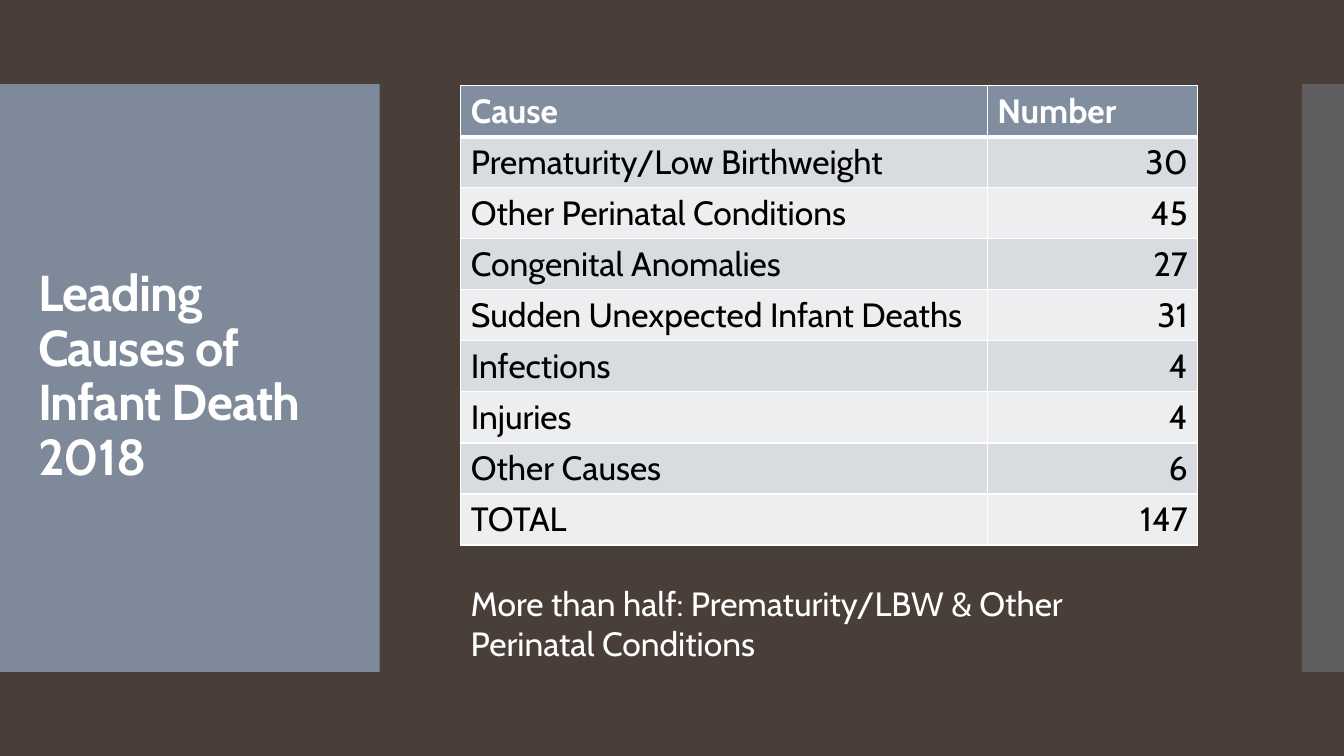
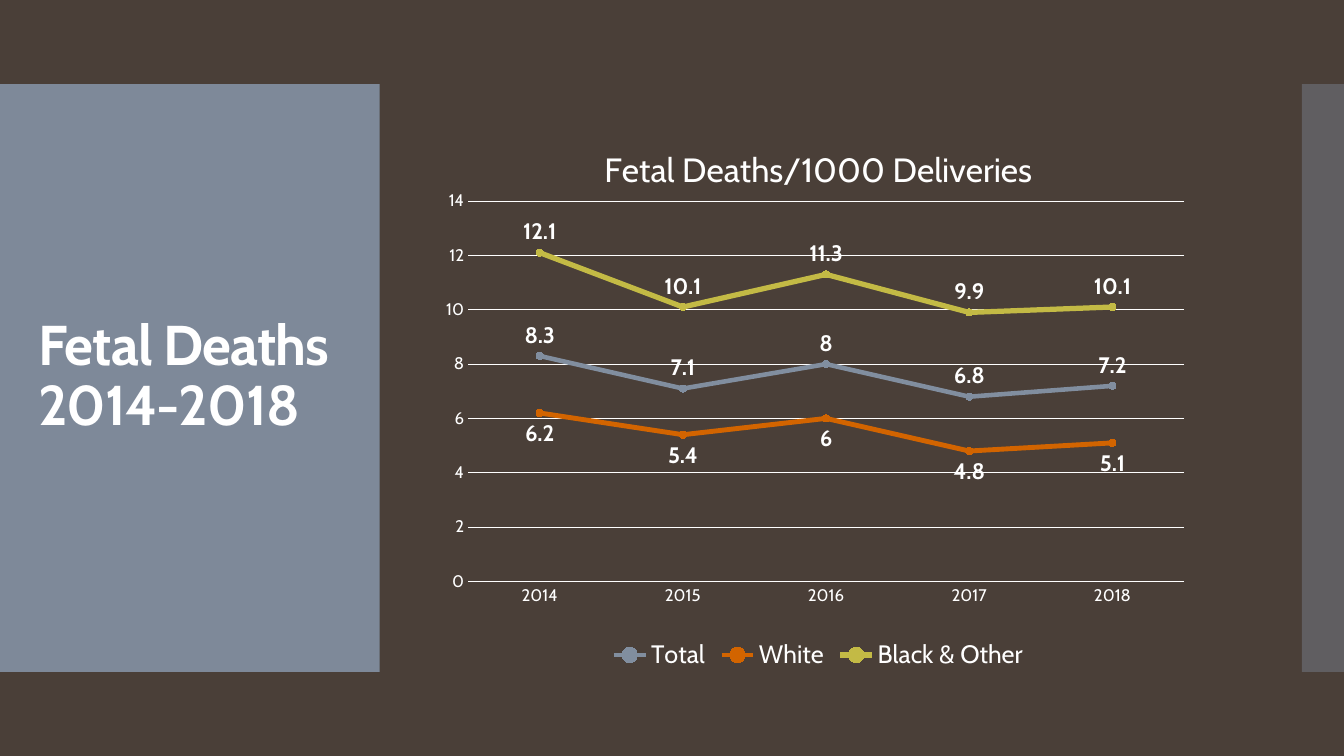
from dataclasses import dataclass

from lxml import etree
from pptx import Presentation
from pptx import util as u
from pptx.chart.data import CategoryChartData
from pptx.dml.color import RGBColor
from pptx.enum import chart as charts, shapes, text
from pptx.oxml.ns import qn


@dataclass(frozen=True)
class Theme:
    # Colours
    ground: str = "4A3F38"
    slate: str = "818E9F"
    orange: str = "D26400"
    olive: str = "C3BA45"
    white: str = "FFFFFF"
    black: str = "000000"
    stripes: tuple = ("D8DBDF", "EDEEF0")
    # Type
    font: str = "Cabin"
    title: int = 40
    title_small: int = 36
    body: int = 24
    legend: int = 18
    label: int = 16
    axis: int = 12
    # Grid of the slide
    cols: int = 32
    rows: int = 18


def rgb(code):
    return RGBColor.from_string(code)


def child(parent, tag, **attrs):
    return etree.SubElement(parent, qn(tag), attrs)


class Deck:
    def __init__(self, theme):
        self.t = theme
        self.prs = Presentation()
        self.prs.slide_width, self.prs.slide_height = u.Inches(13.33), u.Inches(7.5)
        fill = self.prs.slide_master.background.fill
        fill.solid()
        fill.fore_color.rgb = rgb(theme.ground)
        self.s = None

    # Grid box (column, row, columns wide, rows high) to lengths
    def box(self, x, y, w, h):
        cw = self.prs.slide_width / self.t.cols
        rh = self.prs.slide_height / self.t.rows
        return [round(v) for v in (x * cw, y * rh, w * cw, h * rh)]

    def style(self, font, size, color=None, bold=False):
        font.name, font.size, font.bold = self.t.font, u.Pt(size), bold
        font.color.rgb = rgb(color or self.t.white)

    def run(self, p, words, size, color=None, bold=False):
        r = p.add_run()
        r.text = words
        self.style(r.font, size, color, bold)
        return r

    # Slide with its two side bands and title
    def slide(self, lines, size):
        self.s = self.prs.slides.add_slide(self.prs.slide_layouts[6])
        self.band(0, 9.04, 95)
        self.band(31, 1, 40)
        tf = self.textbox(0.67, 2.95, 7.73, 12.07)
        tf.vertical_anchor = text.MSO_ANCHOR.MIDDLE
        p = tf.paragraphs[0]
        p.line_spacing = 0.9
        for i, line in enumerate(lines):
            if i:
                p.add_line_break()
            r = self.run(p, line, size, bold=True)
            r.font._element.set("spc", "-60")

    def band(self, x, w, opacity):
        sp = self.s.shapes.add_shape(shapes.MSO_SHAPE.RECTANGLE, *self.box(x, 2, w, 14))
        sp.shadow.inherit = False
        sp.fill.solid()
        sp.fill.fore_color.rgb = rgb(self.t.slate)
        sp.line.fill.background()
        color = sp.element.spPr.find(qn("a:solidFill")).find(qn("a:srgbClr"))
        child(color, "a:alpha", val=str(opacity * 1000))

    def textbox(self, *at):
        tf = self.s.shapes.add_textbox(*self.box(*at)).text_frame
        tf.word_wrap = True
        return tf

    def note(self, words, *at):
        self.run(self.textbox(*at).paragraphs[0], words, self.t.body)

    # Table with a heading row and striped body
    def table(self, rows, shares, *at):
        x, y, w, h = self.box(*at)
        tb = self.s.shapes.add_table(len(rows), len(shares), x, y, w, h).table
        for col, share in zip(tb.columns, shares):
            col.width = round(w * share / sum(shares))
        for i, row in enumerate(rows):
            tb.rows[i].height = round(h / len(rows))
            head = i == 0
            for j, value in enumerate(row):
                cell = tb.cell(i, j)
                cell.fill.solid()
                cell.fill.fore_color.rgb = rgb(
                    self.t.slate if head else self.t.stripes[(i - 1) % 2])
                p = cell.text_frame.paragraphs[0]
                if j and not head:
                    p.alignment = text.PP_ALIGN.RIGHT
                self.run(p, str(value), self.t.body,
                         self.t.white if head else self.t.black, head)
                self.borders(cell, top=3 if i == 1 else 1, bottom=3 if head else 1)

    def borders(self, cell, top, bottom):
        tc_pr = cell._tc.get_or_add_tcPr()
        sides = (("L", 1), ("R", 1), ("T", top), ("B", bottom))
        for i, (side, width) in enumerate(sides):
            ln = etree.Element(qn(f"a:ln{side}"), w=str(u.Pt(width)))
            child(child(ln, "a:solidFill"), "a:srgbClr", val=self.t.white)
            tc_pr.insert(i, ln)

    # Line chart; each series is (name, values, colour, width, label position)
    def line_chart(self, title, cats, series, plot, *at):
        data = CategoryChartData()
        data.categories = cats
        for name, values, *_ in series:
            data.add_series(name, values)
        ch = self.s.shapes.add_chart(
            charts.XL_CHART_TYPE.LINE_MARKERS, *self.box(*at), data).chart
        self.style(ch.font, 10)
        ch.has_title = True
        self.run(ch.chart_title.text_frame.paragraphs[0], title, self.t.body)
        ch.chart_title.include_in_layout = False
        ch.has_legend = True
        ch.legend.position = charts.XL_LEGEND_POSITION.BOTTOM
        ch.legend.include_in_layout = False
        self.style(ch.legend.font, self.t.legend)
        self.axes(ch)
        ch.plots[0].vary_by_categories = False
        for ser, (_, _, color, width, place) in zip(ch.plots[0].series, series):
            self.series(ser, color, width, place)
        self.plot_area(ch, plot)

    def axes(self, ch):
        cat, val = ch.category_axis, ch.value_axis
        for axis in (cat, val):
            axis.major_tick_mark = axis.minor_tick_mark = charts.XL_TICK_MARK.NONE
            self.style(axis.tick_labels.font, self.t.axis)
        val.minimum_scale, val.maximum_scale, val.major_unit = 0, 14, 2
        val.format.line.fill.background()
        val.has_major_gridlines = True
        for line in (cat.format.line, val.major_gridlines.format.line):
            line.color.rgb, line.width = rgb(self.t.white), u.Pt(0.75)

    def series(self, ser, color, width, place):
        ser.smooth = False
        ser.format.line.color.rgb = rgb(color)
        ser.format.line.width = u.Pt(width)
        ser.marker.style, ser.marker.size = charts.XL_MARKER_STYLE.CIRCLE, 5
        ser.marker.format.fill.solid()
        ser.marker.format.fill.fore_color.rgb = rgb(color)
        ser.marker.format.line.color.rgb = rgb(color)
        labels = ser.data_labels
        labels.show_value, labels.position = True, place
        self.style(labels.font, self.t.label, bold=True)

    # Clear backgrounds and a fixed inner plot, in shares of the chart
    def plot_area(self, ch, plot):
        inner = ch.element.find(qn("c:chart"))
        area = inner.find(qn("c:plotArea"))
        for old in area.findall(qn("c:layout")):
            area.remove(old)
        layout = etree.Element(qn("c:layout"))
        manual = child(layout, "c:manualLayout")
        child(manual, "c:layoutTarget", val="inner")
        for key in "xy":
            child(manual, f"c:{key}Mode", val="edge")
        for key, share in zip("xywh", plot):
            child(manual, f"c:{key}", val=str(share))
        area.insert(0, layout)
        child(child(area, "c:spPr"), "a:noFill")
        clear = etree.Element(qn("c:spPr"))
        child(clear, "a:noFill")
        child(child(clear, "a:ln"), "a:noFill")
        inner.addnext(clear)


def main():
    t = Theme()
    deck = Deck(t)

    # Causes of death
    deck.slide(["Leading Causes of Infant Death", "2018"], t.title_small)
    causes = [
        ("Cause", "Number"),
        ("Prematurity/Low Birthweight", 30),
        ("Other Perinatal Conditions", 45),
        ("Congenital Anomalies", 27),
        ("Sudden Unexpected Infant Deaths", 31),
        ("Infections", 4),
        ("Injuries", 4),
        ("Other Causes", 6),
        ("TOTAL", 147),
    ]
    deck.table(causes, (5, 2), 10.97, 2.04, 17.55, 10.94)
    deck.note("More than half: Prematurity/LBW & Other Perinatal Conditions",
              10.97, 13.75, 17.55, 2.18)

    # Fetal deaths by year
    deck.slide(["Fetal Deaths", "2014-2018"], t.title)
    above, below = charts.XL_LABEL_POSITION.ABOVE, charts.XL_LABEL_POSITION.BELOW
    deck.line_chart(
        "Fetal Deaths/1000 Deliveries",
        [str(year) for year in range(2014, 2019)],
        [("Total", (8.3, 7.1, 8, 6.8, 7.2), t.slate, 3.25, above),
         ("White", (6.2, 5.4, 6, 4.8, 5.1), t.orange, 3.5, below),
         ("Black & Other", (12.1, 10.1, 11.3, 9.9, 10.1), t.olive, 3.75, above)],
        (0.05, 0.14, 0.92, 0.69),
        10.22, 2.95, 18.53, 13.13)

    deck.prs.save("out.pptx")


if __name__ == "__main__":
    main()
